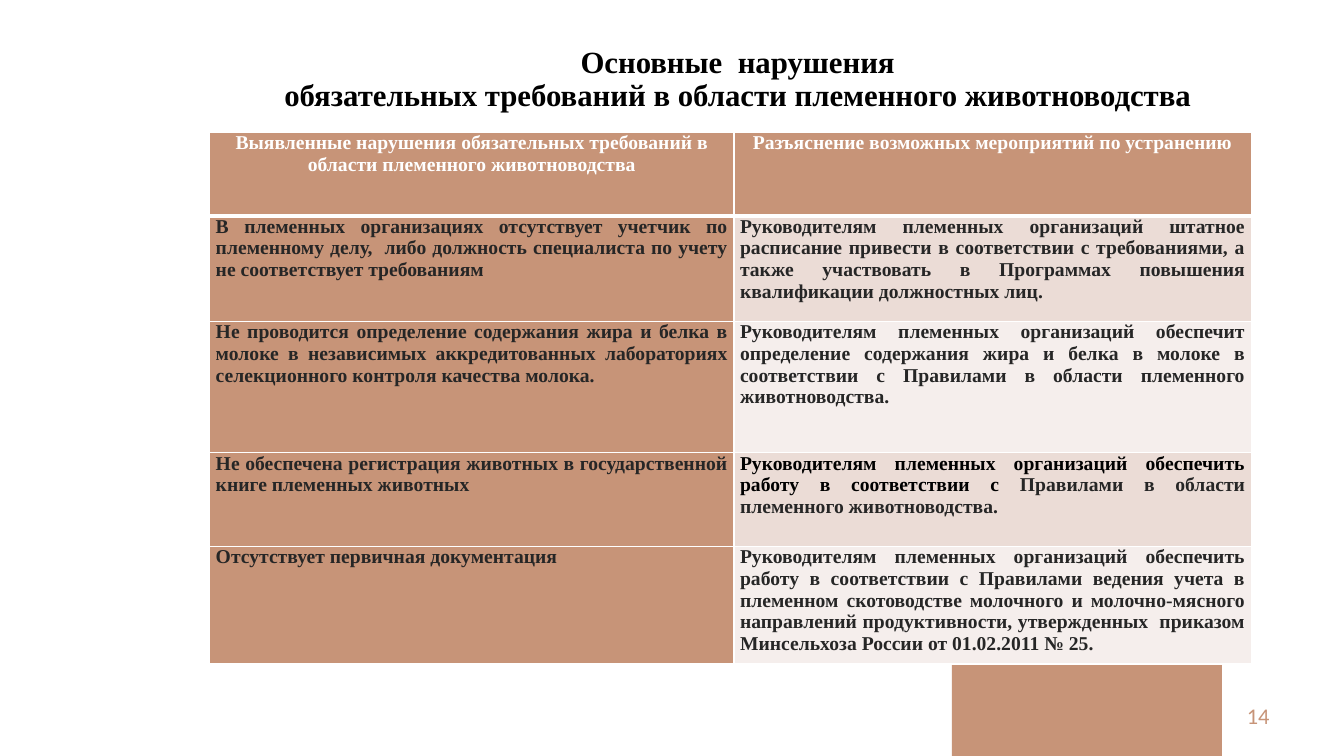
"""Slide with a table of typical livestock breeding violations and remedies."""
from lxml import etree
from pptx import Presentation
from pptx.dml.color import RGBColor
from pptx.enum.shapes import MSO_SHAPE
from pptx.enum.text import MSO_ANCHOR, PP_ALIGN
from pptx.oxml.ns import qn
from pptx.util import Inches, Pt

RECTANGLE = MSO_SHAPE.RECTANGLE
TOP, MIDDLE, BOTTOM = MSO_ANCHOR.TOP, MSO_ANCHOR.MIDDLE, MSO_ANCHOR.BOTTOM
CENTER, RIGHT, JUSTIFY = PP_ALIGN.CENTER, PP_ALIGN.RIGHT, PP_ALIGN.JUSTIFY

COLORS = {
    "accent": "C79478",
    "band_dark": "EBDCD6",
    "band_light": "F5EEEC",
    "white": "FFFFFF",
    "black": "000000",
    "text": "262626",
}


def write(frame, *parts, size=14, color="text", font="Times New Roman",
          bold=True, align=JUSTIFY, anchor=TOP):
    """Write parts, each a string or a (string, color) pair, as one paragraph."""
    frame.word_wrap = True
    frame.vertical_anchor = anchor
    paragraph = frame.paragraphs[0]
    paragraph.alignment = align
    for part in parts:
        text, part_color = (part, color) if isinstance(part, str) else part
        for number, line in enumerate(text.split("\n")):
            if number:
                paragraph.add_line_break()
            run = paragraph.add_run()
            run.text = line
            run.font.size = Pt(size)
            run.font.name = font
            run.font.bold = bold
            run.font.color.rgb = RGBColor.from_string(COLORS[part_color])
    return paragraph


def set_borders(cell, **widths):
    """Give the cell white borders, widths in points, ahead of its fill."""
    properties = cell._tc.get_or_add_tcPr()
    for position, (side, width) in enumerate(widths.items()):
        line = etree.Element(qn(f"a:ln{side}"), w=str(Pt(width)))
        fill = etree.SubElement(line, qn("a:solidFill"))
        etree.SubElement(fill, qn("a:srgbClr"), val=COLORS["white"])
        properties.insert(position, line)


presentation = Presentation()
presentation.slide_width = Inches(13.33)
presentation.slide_height = Inches(7.5)
slide = presentation.slides.add_slide(presentation.slide_layouts[6])

footer_block = slide.shapes.add_shape(
    RECTANGLE, Inches(9.44), Inches(6.56), Inches(2.68), Inches(0.94))
footer_block.shadow.inherit = False
footer_block.fill.solid()
footer_block.fill.fore_color.rgb = RGBColor.from_string(COLORS["accent"])
footer_block.line.fill.background()

page_number = slide.shapes.add_textbox(
    Inches(9.69), Inches(6.9), Inches(3), Inches(0.4))
write(page_number.text_frame, "14", size=16, color="accent", font="Calibri",
      bold=False, align=RIGHT, anchor=MIDDLE)

title = slide.shapes.add_textbox(
    Inches(2.42), Inches(0.4), Inches(9.79), Inches(0.77))
heading = write(
    title.text_frame,
    "Основные  нарушения\nобязательных требований в области племенного животноводства",
    size=22, color="black", align=CENTER, anchor=BOTTOM)
heading.line_spacing = 0.9
heading.space_before = Pt(10)

header = ("Выявленные нарушения обязательных требований в области племенного животноводства",
          "Разъяснение возможных мероприятий по устранению")
violations = [
    ("В племенных организациях отсутствует учетчик по племенному делу,  либо должность "
     "специалиста по учету не соответствует требованиям",
     ["Руководителям племенных организаций штатное расписание привести в соответствии с "
      "требованиями, а также участвовать в Программах повышения квалификации должностных лиц."]),
    ("Не проводится определение содержания жира и белка в молоке в независимых "
     "аккредитованных лабораториях селекционного контроля качества молока.",
     ["Руководителям племенных организаций обеспечит определение содержания жира и белка "
      "в молоке в соответствии с Правилами в области племенного животноводства."]),
    ("Не обеспечена регистрация животных в государственной книге племенных животных",
     [("Руководителям племенных организаций обеспечить работу в соответствии с ", "black"),
      "Правилами в области племенного животноводства."]),
    ("Отсутствует первичная документация",
     ["Руководителям племенных организаций обеспечить работу в соответствии с Правилами "
      "ведения учета в племенном скотоводстве молочного и молочно-мясного направлений "
      "продуктивности, утвержденных  приказом Минсельхоза России от 01.02.2011 № 25."]),
]
column_widths = [5.2, 5.13]
row_heights = [0.83, 1.05, 1.3, 0.93, 0.97]

table = slide.shapes.add_table(
    len(row_heights), len(column_widths), Inches(2.08), Inches(1.31),
    Inches(sum(column_widths)), Inches(sum(row_heights))).table
for column, width in zip(table.columns, column_widths):
    column.width = Inches(width)
for row, height in zip(table.rows, row_heights):
    row.height = Inches(height)

for column, caption in enumerate(header):
    write(table.cell(0, column).text_frame, caption, color="white", align=CENTER)
for row, (violation, remedy) in enumerate(violations, start=1):
    write(table.cell(row, 0).text_frame, violation)
    write(table.cell(row, 1).text_frame, *remedy)

for row in range(len(row_heights)):
    band = "band_dark" if row % 2 else "band_light"
    for column in range(len(column_widths)):
        cell = table.cell(row, column)
        cell.margin_left = cell.margin_right = Inches(0.06)
        cell.margin_top = cell.margin_bottom = 0
        fill_color = "accent" if row == 0 or column == 0 else band
        cell.fill.solid()
        cell.fill.fore_color.rgb = RGBColor.from_string(COLORS[fill_color])
        set_borders(cell, L=1, R=1, T=3 if row == 1 else 1, B=3 if row == 0 else 1)

presentation.save("out.pptx")
